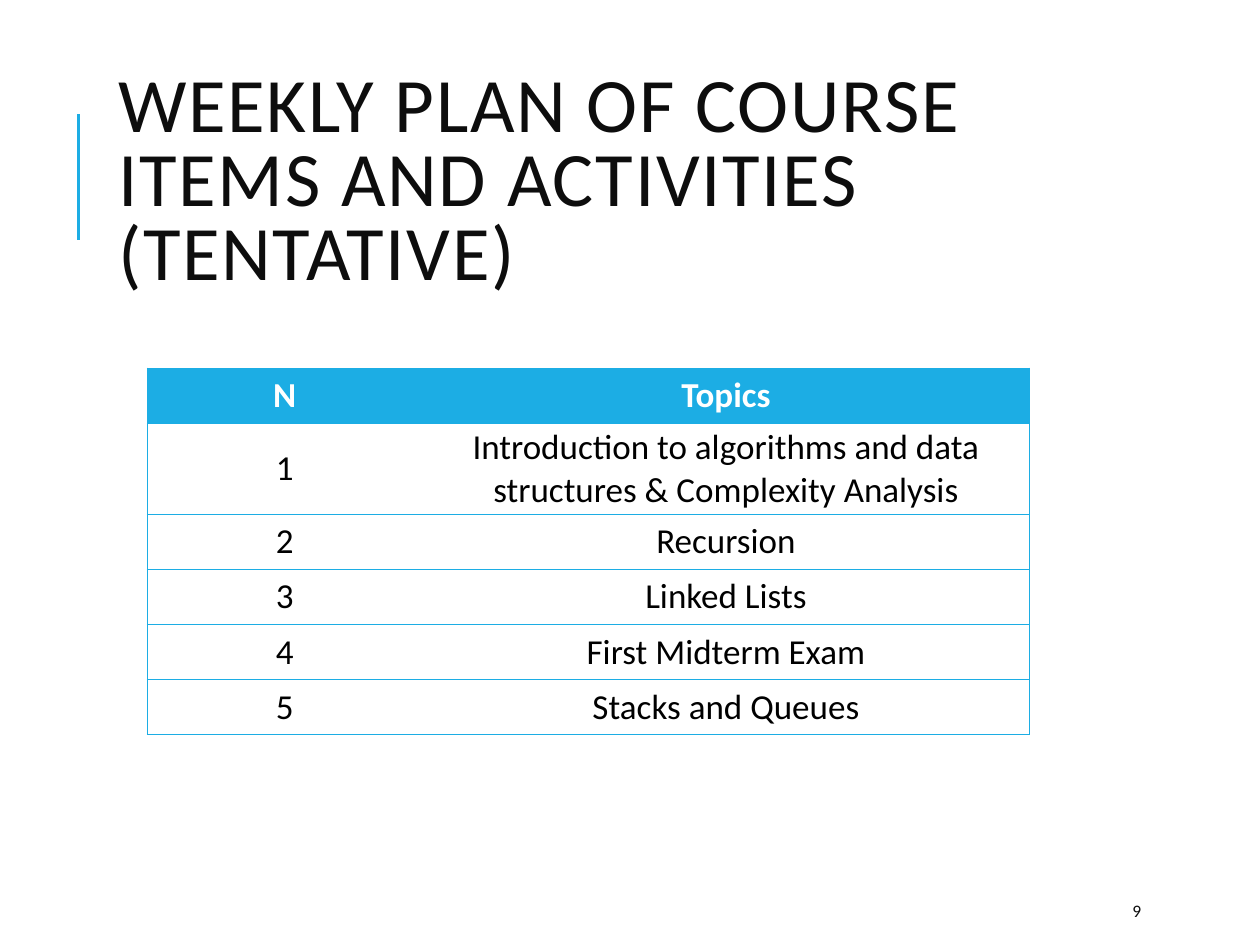
from lxml.etree import SubElement
from pptx import Presentation
from pptx.dml.color import RGBColor
from pptx.enum.shapes import MSO_CONNECTOR as Connector
from pptx.enum.text import MSO_ANCHOR as Anchor, PP_ALIGN as Align
from pptx.oxml.ns import qn
from pptx.util import Cm, Pt

ACCENT = RGBColor(0x1C, 0xAD, 0xE4)
INK = RGBColor(0x0D, 0x0D, 0x0D)
BLACK = RGBColor(0, 0, 0)
WHITE = RGBColor(0xFF, 0xFF, 0xFF)
FONT = "Calibri"

TITLE = "WEEKLY PLAN OF COURSE ITEMS AND ACTIVITIES (TENTATIVE)"
TOPICS = [
    "Introduction to algorithms and data structures & Complexity Analysis",
    "Recursion",
    "Linked Lists",
    "First Midterm Exam",
    "Stacks and Queues",
]
COLUMN_WIDTHS = [Cm(5.54), Cm(12.25)]
ROW_HEIGHT = Cm(1.11)
TALL_ROW_HEIGHT = Cm(1.84)


def set_font(para, size, color, bold=False):
    font = para.font
    font.name = FONT
    font.size = Pt(size)
    font.bold = bold
    font.color.rgb = color


def add_text(page, text, left, top, width, height, size):
    box = page.shapes.add_textbox(Cm(left), Cm(top), Cm(width), Cm(height))
    frame = box.text_frame
    frame.word_wrap = True
    frame.vertical_anchor = Anchor.MIDDLE
    para = frame.paragraphs[0]
    para.text = text
    set_font(para, size, INK)
    return para


def add_title(page):
    para = add_text(page, TITLE, 2.13, 1.63, 20.24, 4.17, 44)
    para.line_spacing = 0.8
    para.runs[0].font._element.set("spc", "100")


def add_accent_line(page):
    line = page.shapes.add_connector(
        Connector.STRAIGHT, Cm(1.58), Cm(4.83), Cm(1.58), Cm(2.29))
    line.line.color.rgb = ACCENT
    line.line.width = Pt(1.5)
    SubElement(line._element.spPr, qn("a:effectLst"))


def set_borders(cell, visible_sides):
    properties = cell._tc.get_or_add_tcPr()
    for side in "LRTB":
        border = SubElement(properties, qn(f"a:ln{side}"), w=str(Pt(0.75)))
        if side in visible_sides:
            fill = SubElement(border, qn("a:solidFill"))
            SubElement(fill, qn("a:srgbClr"), val=str(ACCENT))
        else:
            SubElement(border, qn("a:noFill"))


def fill_cell(cell, text, is_header, sides):
    cell.margin_left = cell.margin_right = Cm(0.13)
    cell.margin_top = cell.margin_bottom = 0
    cell.vertical_anchor = Anchor.MIDDLE
    set_borders(cell, sides)
    cell.fill.solid()
    cell.fill.fore_color.rgb = ACCENT if is_header else WHITE
    para = cell.text_frame.paragraphs[0]
    para.text = text
    para.alignment = Align.CENTER
    set_font(para, 20, WHITE if is_header else BLACK, is_header)


def add_plan_table(page):
    rows = [("N", "Topics")]
    rows += [(str(week), topic) for week, topic in enumerate(TOPICS, 1)]
    heights = [ROW_HEIGHT] * len(rows)
    heights[1] = TALL_ROW_HEIGHT
    table = page.shapes.add_table(
        len(rows), len(COLUMN_WIDTHS), Cm(2.97), Cm(7.42),
        sum(COLUMN_WIDTHS), sum(heights)).table
    table.horz_banding = False
    for column, width in zip(table.columns, COLUMN_WIDTHS):
        column.width = width
    for index, (row, height, texts) in enumerate(zip(table.rows, heights, rows)):
        row.height = height
        for cell, text, sides in zip(row.cells, texts, ("LTB", "RTB")):
            fill_cell(cell, text, index == 0, sides)


def main():
    deck = Presentation()
    deck.slide_width = Cm(25.4)
    deck.slide_height = Cm(19.05)
    page = deck.slides.add_slide(deck.slide_layouts[6])
    add_accent_line(page)
    add_title(page)
    add_plan_table(page)
    add_text(page, "9", 22.58, 17.98, 2.03, 0.76, 10)
    deck.save("out.pptx")


if __name__ == "__main__":
    main()
